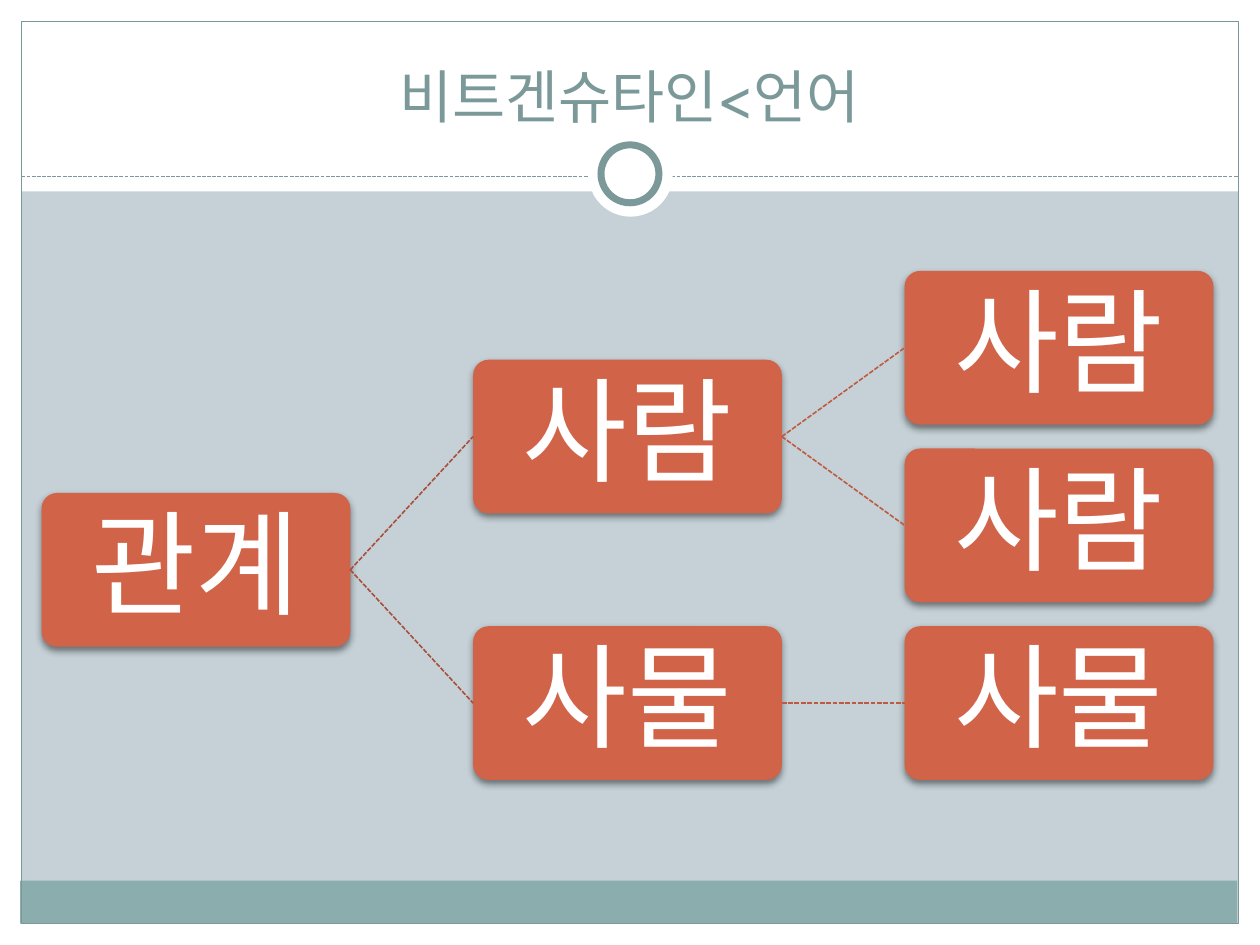
from lxml.etree import SubElement
from pptx import Presentation
from pptx.dml.color import RGBColor
from pptx.enum.dml import MSO_LINE
from pptx.enum.shapes import MSO_CONNECTOR, MSO_SHAPE as SHAPE
from pptx.enum.text import MSO_ANCHOR, PP_ALIGN
from pptx.oxml.ns import qn
from pptx.util import Inches, Pt

FONT = "TeX Gyre Schola"
COLORS = {
    "page": "C5D1D7", "white": "FFFFFF", "band": "8CADAE", "frame": "7C999A",
    "node": "D16349", "link1": "A74F3A", "link2": "BE5A42", "shadow": "000000",
}
TITLE = "비트겐슈타인<언어"
# Each node: label, row (in leaf rows), children
TREE = ("관계", 1.25, [
    ("사람", 0.5, [("사람", 0, []), ("사람", 1, [])]),
    ("사물", 2, [("사물", 2, [])]),
])
# Backdrop: shape, left, top, width, height, fill, line, line width
BACKDROP = [
    (SHAPE.RECTANGLE, 0, 7.33, 10, 0.17, "white", None, 0),
    (SHAPE.RECTANGLE, 0, 0, 10, 1.52, "white", None, 0),
    (SHAPE.RECTANGLE, 0, 0, 0.17, 7.5, "white", None, 0),
    (SHAPE.RECTANGLE, 9.83, 0, 0.17, 7.5, "white", None, 0),
    (SHAPE.RECTANGLE, 0.16, 6.99, 9.66, 0.34, "band", None, 0),
    (SHAPE.RECTANGLE, 0.17, 0.17, 9.66, 7.16, None, "frame", 0.75),
]
RING = [
    (SHAPE.OVAL, 4.67, 1.05, 0.67, 0.67, "white", None, 0),
    (SHAPE.OVAL, 4.77, 1.15, 0.46, 0.46, "white", "frame", 4),
]
NODE_W, NODE_H = 2.45, 1.22
LEFT, TOP, COLUMN_STEP, ROW_STEP = 0.33, 2.15, 3.425, 1.41

deck = Presentation()
deck.slide_width, deck.slide_height = Inches(10), Inches(7.5)
page = deck.slides.add_slide(deck.slide_layouts[6])


def rgb(name):
    return RGBColor.from_string(COLORS[name])


def add_shape(kind, left, top, width, height, fill, line, line_width):
    shape = page.shapes.add_shape(
        kind, Inches(left), Inches(top), Inches(width), Inches(height))
    shape.shadow.inherit = False
    if fill:
        shape.fill.solid()
        shape.fill.fore_color.rgb = rgb(fill)
    else:
        shape.fill.background()
    if line:
        shape.line.color.rgb = rgb(line)
        shape.line.width = Pt(line_width)
    else:
        shape.line.fill.background()
    return shape


def add_dashed_line(x1, y1, x2, y2, color, width):
    line = page.shapes.add_connector(MSO_CONNECTOR.STRAIGHT, x1, y1, x2, y2)
    line.line.color.rgb = rgb(color)
    line.line.width = Pt(width)
    line.line.dash_style = MSO_LINE.SQUARE_DOT
    SubElement(line._element.spPr, qn("a:effectLst"))
    return line


def write(box, text, size, color, anchor):
    frame = box.text_frame
    frame.word_wrap = True
    frame.vertical_anchor = anchor
    para = frame.paragraphs[0]
    para.text = text
    para.alignment = PP_ALIGN.CENTER
    para.font.name, para.font.size = FONT, Pt(size)
    para.font.color.rgb = rgb(color)
    return para


def add_soft_shadow(shape):
    effects = shape._element.spPr.find(qn("a:effectLst"))
    outer = SubElement(effects, qn("a:outerShdw"), blurRad=str(Pt(4)),
                       dist=str(Pt(2)), dir="5400000", rotWithShape="0")
    tint = SubElement(outer, qn("a:srgbClr"), val=COLORS["shadow"])
    SubElement(tint, qn("a:alpha"), val="45000")


def add_node(node, level=0):
    """Draw a node and, to its right, its children with their links."""
    label, row, children = node
    box = add_shape(SHAPE.ROUNDED_RECTANGLE, LEFT + level * COLUMN_STEP,
                    TOP + row * ROW_STEP, NODE_W, NODE_H, "node", None, 0)
    box.adjustments[0] = 0.1
    add_soft_shadow(box)
    para = write(box, label, 65, "white", MSO_ANCHOR.MIDDLE)
    para.line_spacing = 0.9
    para.space_after = Pt(22.75)
    frame = box.text_frame
    frame.margin_left = frame.margin_right = Inches(0.05)
    frame.margin_top = frame.margin_bottom = Inches(0.05)
    for child in children:
        child_box = add_node(child, level + 1)
        link = add_dashed_line(0, 0, 0, 0, f"link{level + 1}", 0.9)
        link.begin_connect(box, 3)
        link.end_connect(child_box, 1)
    return box


page.background.fill.solid()
page.background.fill.fore_color.rgb = rgb("page")
for part in BACKDROP:
    add_shape(*part)
add_dashed_line(Inches(0.17), Inches(1.4), Inches(9.83), Inches(1.4), "frame", 0.75)
for part in RING:
    add_shape(*part)
title = page.shapes.add_textbox(Inches(0.33), Inches(0.25), Inches(9.33), Inches(0.83))
write(title, TITLE, 33, "frame", MSO_ANCHOR.BOTTOM)
add_node(TREE)
deck.save("out.pptx")
